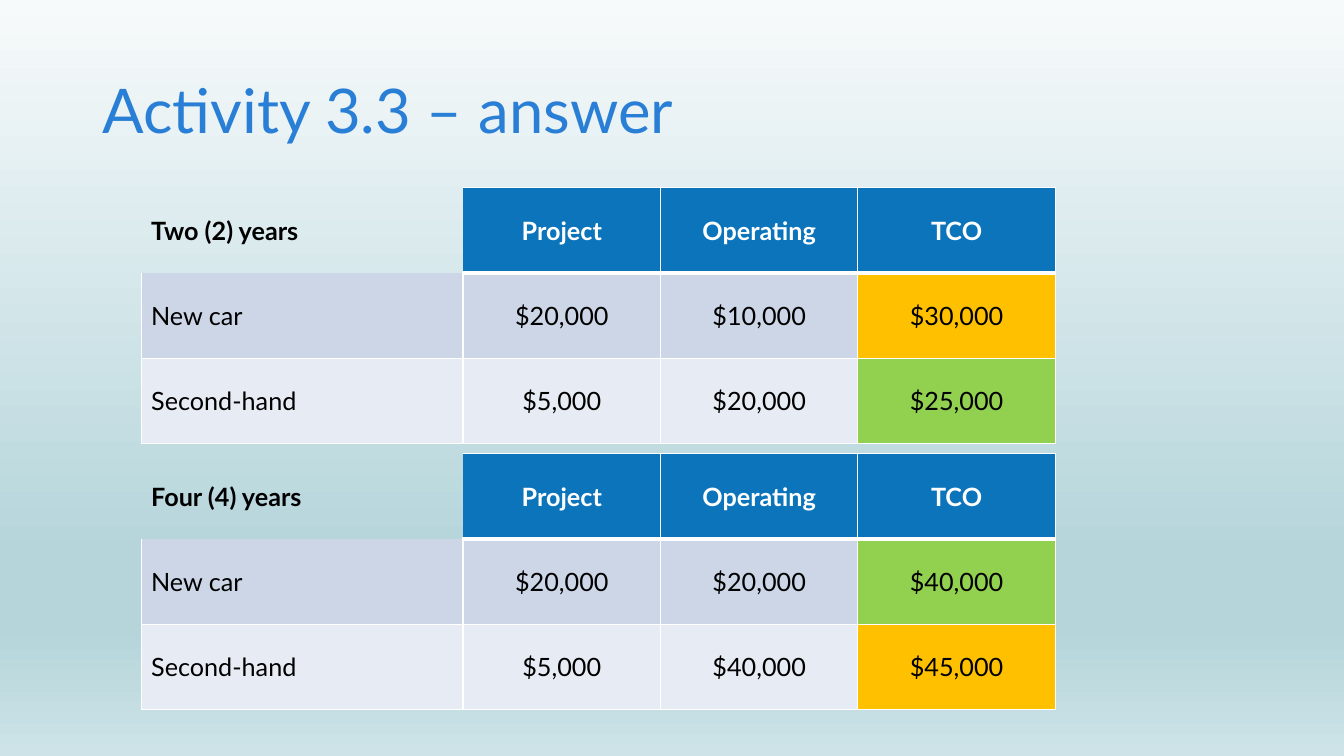
import pptx
import pptx.dml.color
import pptx.enum.text
import pptx.util
from dataclasses import dataclass
from lxml import etree

Pt = pptx.util.Pt
RGB = pptx.dml.color.RGBColor.from_string
ALIGN = pptx.enum.text.PP_ALIGN
MIDDLE = pptx.enum.text.MSO_ANCHOR.MIDDLE
DRAWING = "{http://schemas.openxmlformats.org/drawingml/2006/main}"


@dataclass
class Theme:
    font: str = "Lato"
    title_size: int = 44
    table_size: int = 18
    title: str = "297FD5"
    text: str = "000000"
    border: str = "FFFFFF"
    header: str = "0C74BB"
    header_text: str = "FFFFFF"
    bands: tuple = ("CCD6E7", "E7EBF3")
    cheaper: str = "92D050"
    dearer: str = "FFC000"
    background: tuple = ((0, "F7FAFB"), (74, "B5D5DB"), (83, "B5D5DB"), (100, "CDE3E7"))


theme = Theme()


def format_text(paragraph, size, color, bold=False):
    font = paragraph.font
    for name, value in {"name": theme.font, "size": Pt(size), "bold": bold}.items():
        setattr(font, name, value)
    font.color.rgb = RGB(color)


def add_border(cell, side, width):
    """Draw one side (L, R, T or B) of a cell; width 0 hides it."""
    properties = cell._tc.get_or_add_tcPr()
    line = etree.SubElement(properties, f"{DRAWING}ln{side}", w=str(Pt(width)))
    if width:
        fill = etree.SubElement(line, f"{DRAWING}solidFill")
        etree.SubElement(fill, f"{DRAWING}srgbClr", val=theme.border)
    else:
        etree.SubElement(line, f"{DRAWING}noFill")


presentation = pptx.Presentation()
presentation.slide_width = Pt(960)
presentation.slide_height = Pt(540)
slide = presentation.slides.add_slide(presentation.slide_layouts[6])

# Background gradient, top to bottom
background = slide.background.fill
background.gradient()
background.gradient_angle = 270
stops = slide._element.find(f".//{DRAWING}gsLst")
for stop in list(stops):
    stops.remove(stop)
for percent, color in theme.background:
    stop = etree.SubElement(stops, f"{DRAWING}gs", pos=str(percent * 1000))
    etree.SubElement(stop, f"{DRAWING}srgbClr", val=color)

# Title
title = slide.shapes.add_textbox(Pt(66), Pt(28.8), Pt(828), Pt(104.4))
title.text_frame.word_wrap = True
title.text_frame.vertical_anchor = MIDDLE
paragraph = title.text_frame.paragraphs[0]
paragraph.text = "Activity 3.3 – answer"
paragraph.line_spacing = 0.9
format_text(paragraph, theme.title_size, theme.title)

# Cost tables
column_widths = (230, 141, 141, 141)
row_height = 61
headings = ("Project", "Operating", "TCO")
cost_tables = (
    (134, "Two (2) years", {
        "New car": (20000, 10000),
        "Second-hand": (5000, 20000),
    }),
    (324, "Four (4) years", {
        "New car": (20000, 20000),
        "Second-hand": (5000, 40000),
    }),
)

for top, period, costs in cost_tables:
    lowest_total = min(sum(pair) for pair in costs.values())
    rows = [(period, *headings)]
    for option, pair in costs.items():
        rows.append((option, *(f"${amount:,}" for amount in (*pair, sum(pair)))))

    table = slide.shapes.add_table(
        len(rows), len(column_widths), Pt(100.8), Pt(top),
        Pt(sum(column_widths)), Pt(row_height * len(rows))).table
    table.horz_banding = False
    for column, width in zip(table.columns, column_widths):
        column.width = Pt(width)
    for row in table.rows:
        row.height = Pt(row_height)

    for r, labels in enumerate(rows):
        for c, label in enumerate(labels):
            cell = table.cell(r, c)
            is_header = r == 0
            is_corner = is_header and c == 0
            header_rule = 3 if c else 0
            widths = {
                "L": 0 if is_header and c < 2 else 1,
                "R": 0 if is_corner else 1,
                "T": 0 if is_corner else header_rule if r == 1 else 1,
                "B": header_rule if is_header else 1,
            }
            for side, width in widths.items():
                add_border(cell, side, width)

            if is_corner:
                cell.fill.background()
            else:
                if is_header:
                    color = theme.header
                elif c == len(headings):
                    is_cheaper = label == f"${lowest_total:,}"
                    color = theme.cheaper if is_cheaper else theme.dearer
                else:
                    color = theme.bands[r - 1]
                cell.fill.solid()
                cell.fill.fore_color.rgb = RGB(color)

            cell.vertical_anchor = MIDDLE
            paragraph = cell.text_frame.paragraphs[0]
            paragraph.text = label
            paragraph.alignment = ALIGN.CENTER if c else ALIGN.LEFT
            text_color = theme.header_text if is_header and c else theme.text
            format_text(paragraph, theme.table_size, text_color, is_header)

presentation.save("out.pptx")
